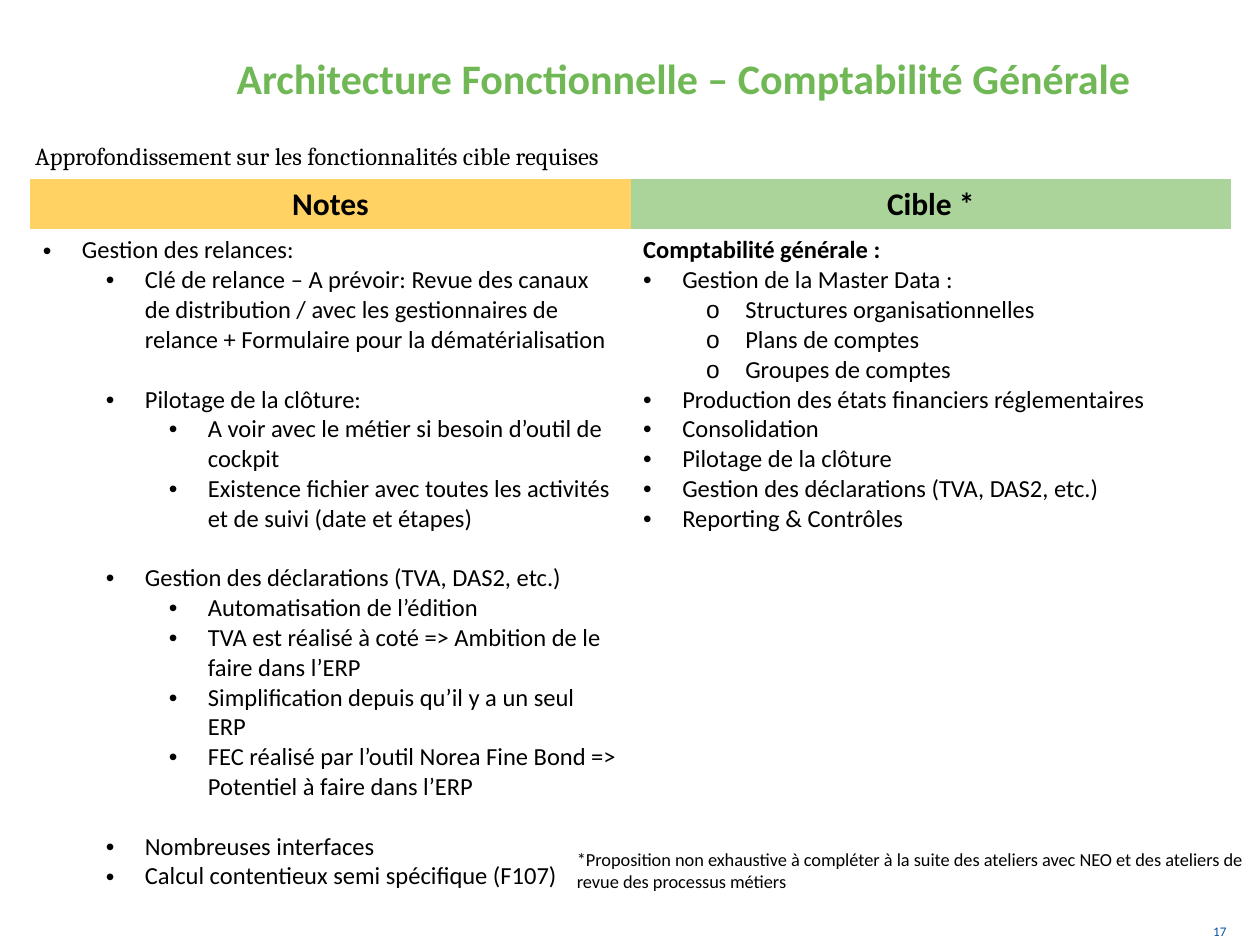
"""Build the functional architecture slide for general accounting."""
from lxml.etree import SubElement
from pptx import Presentation
from pptx.dml.color import RGBColor
from pptx.enum.text import MSO_ANCHOR as ANCHOR, PP_ALIGN as ALIGN
from pptx.oxml.ns import qn
from pptx.util import Inches, Pt

COLUMNS, ROWS = 100, 75
WIDTH, HEIGHT = Inches(10), Inches(7.5)
BLACK = "000000"
BODY = {"size": Pt(14), "name": "Calibri", "bold": False}
HEADER = {"size": Pt(18), "name": "Calibri", "bold": True}
LINE_GAP = Pt(17)

HEADERS = [("Notes", "FFD263"), ("Cible *", "AAD49A")]
NOTES = [
    (0, "Gestion des relances:"),
    (1, "Clé de relance – A prévoir: Revue des canaux de distribution / avec les "
        "gestionnaires de relance + Formulaire pour la dématérialisation"),
    (1, "Pilotage de la clôture:", LINE_GAP),
    (2, "A voir avec le métier si besoin d’outil de cockpit"),
    (2, "Existence fichier avec toutes les activités et de suivi (date et étapes)"),
    (1, "Gestion des déclarations (TVA, DAS2, etc.)", LINE_GAP),
    (2, "Automatisation de l’édition"),
    (2, "TVA est réalisé à coté => Ambition de le faire dans l’ERP"),
    (2, "Simplification depuis qu’il y a un seul ERP"),
    (2, "FEC réalisé par l’outil Norea Fine Bond => Potentiel à faire dans l’ERP"),
    (1, "Nombreuses interfaces", LINE_GAP),
    (1, "Calcul contentieux semi spécifique (F107)"),
]
TARGET_TITLE = "Comptabilité générale :"
TARGETS = [
    (0, "Gestion de la Master Data :"),
    (1, "Structures organisationnelles"),
    (1, "Plans de comptes"),
    (1, "Groupes de comptes"),
    (0, "Production des états financiers réglementaires"),
    (0, "Consolidation"),
    (0, "Pilotage de la clôture"),
    (0, "Gestion des déclarations (TVA, DAS2, etc.)"),
    (0, "Reporting & Contrôles"),
]


def rgb(value):
    """Turn a hex string into a colour."""
    return RGBColor.from_string(value)


def grid(left, top, width, height):
    """Turn grid columns and rows into slide lengths."""
    col, row = WIDTH / COLUMNS, HEIGHT / ROWS
    return [int(n) for n in (left * col, top * row, width * col, height * row)]


def write(p, text, formats, color=BLACK):
    """Add a formatted run to a paragraph."""
    r = p.add_run()
    r.text = text
    for name, value in formats.items():
        setattr(r.font, name, value)
    r.font.color.rgb = rgb(color)


def add_text(slide, box, text, formats, color=BLACK, anchor=ANCHOR.TOP):
    """Add a wrapped text box with one paragraph."""
    tf = slide.shapes.add_textbox(*grid(*box)).text_frame
    tf.word_wrap = True
    tf.vertical_anchor = anchor
    write(tf.paragraphs[0], text, formats, color)


def next_paragraph(tf):
    """Return the empty first paragraph or a new one."""
    return tf.add_paragraph() if tf.text else tf.paragraphs[0]


def add_bullets(tf, items, marks):
    """Add bulleted paragraphs, with one mark for each level."""
    for level, text, *gap in items:
        p = next_paragraph(tf)
        p.level = level
        pPr = p._p.get_or_add_pPr()
        pPr.set("marL", str(Inches(0.31 + 0.5 * level)))
        pPr.set("indent", str(-Inches(0.31)))
        SubElement(pPr, qn("a:buFont"), typeface="Arial")
        SubElement(pPr, qn("a:buChar"), char=marks[level])
        if gap:
            p.space_before = gap[0]
        write(p, text, BODY)


def clear_borders(cell):
    """Remove the four border lines of a cell."""
    tcPr = cell._tc.get_or_add_tcPr()
    for side in "LRTB":
        SubElement(SubElement(tcPr, qn(f"a:ln{side}"), w="0"), qn("a:noFill"))


def add_comparison(slide, box):
    """Add the table of notes and targets."""
    table = slide.shapes.add_table(2, 2, *grid(*box)).table
    table.first_row = table.horz_banding = False
    header_height = Inches(0.37)
    table.rows[1].height = grid(*box)[3] - header_height
    table.rows[0].height = header_height
    for cell in table.iter_cells():
        clear_borders(cell)
    for i, (text, color) in enumerate(HEADERS):
        cell = table.cell(0, i)
        cell.fill.solid()
        cell.fill.fore_color.rgb = rgb(color)
        p = cell.text_frame.paragraphs[0]
        p.alignment = ALIGN.CENTER
        write(p, text, HEADER)
        table.cell(1, i).fill.background()
    notes, targets = (table.cell(1, i).text_frame for i in range(2))
    add_bullets(notes, NOTES, "•••")
    write(targets.paragraphs[0], TARGET_TITLE, {**BODY, "bold": True})
    add_bullets(targets, TARGETS, "•o")


def main():
    """Build and save the slide."""
    prs = Presentation()
    prs.slide_width, prs.slide_height = WIDTH, HEIGHT
    slide = prs.slides.add_slide(prs.slide_layouts[6])
    add_text(slide, (95.3, 72, 4.2, 3), "17", {**BODY, "size": Pt(7.5)},
             "0053A1", ANCHOR.BOTTOM)
    add_text(slide, (17.8, 3.7, 73.7, 8.4),
             "Architecture Fonctionnelle – Comptabilité Générale",
             {**HEADER, "size": Pt(24)}, "70B856")
    add_comparison(slide, (2.4, 14.2, 95.3, 58.7))
    add_text(slide, (44.8, 66.8, 55.2, 4.5),
             "*Proposition non exhaustive à compléter à la suite des ateliers "
             "avec NEO et des ateliers de revue des processus métiers",
             {**BODY, "size": Pt(10.5)})
    add_text(slide, (1.8, 10.7, 96.9, 3.4),
             "Approfondissement sur les fonctionnalités cible requises",
             {**BODY, "name": "Cambria"})
    prs.save("out.pptx")


if __name__ == "__main__":
    main()
